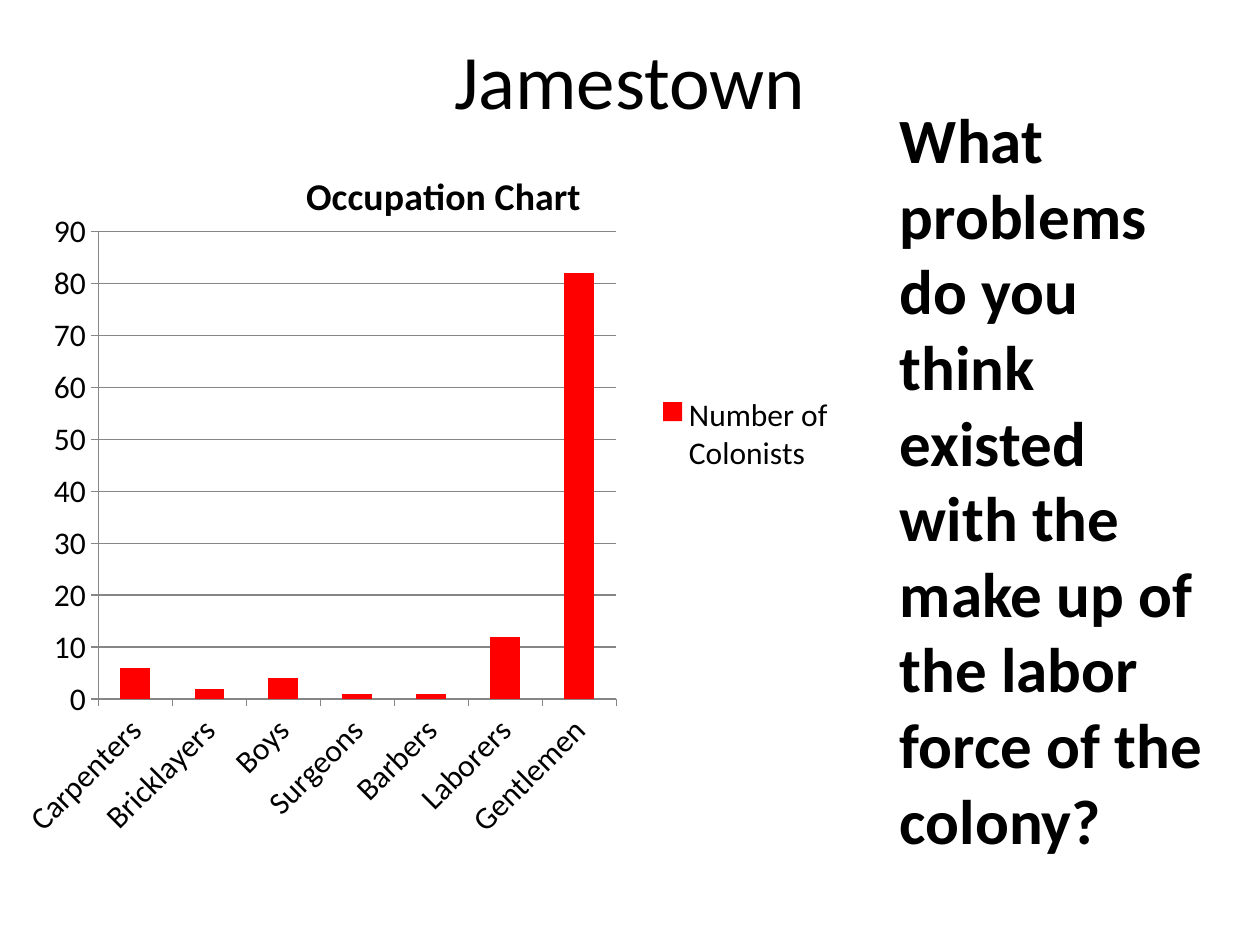
from dataclasses import dataclass

from lxml import etree
from pptx import Presentation
from pptx.chart.data import CategoryChartData
from pptx.dml.color import RGBColor
from pptx.enum.chart import XL_CHART_TYPE as ChartType
from pptx.enum.chart import XL_LEGEND_POSITION as LegendPos
from pptx.enum.chart import XL_TICK_MARK as Tick
from pptx.enum.text import MSO_ANCHOR as Anchor
from pptx.enum.text import PP_ALIGN as Align
from pptx.oxml.ns import qn
from pptx.util import Pt


@dataclass(frozen=True)
class Theme:
    font: str = "Calibri"
    text: RGBColor = RGBColor(0, 0, 0)
    bar: RGBColor = RGBColor(255, 0, 0)
    grid: RGBColor = RGBColor(0x86, 0x86, 0x86)
    title: float = 44
    question: float = 36
    chart: float = 18
    chart_title: float = 21.6


class SlideBuilder:
    def __init__(self, prs, theme):
        self.theme = theme
        self.slide = prs.slides.add_slide(prs.slide_layouts[5])

    def style(self, font, size, bold=False):
        font.name, font.size, font.bold = self.theme.font, Pt(size), bold
        font.color.rgb = self.theme.text

    def title(self, text, *box):
        sp = self.slide.shapes.title
        sp.left, sp.top, sp.width, sp.height = map(Pt, box)
        tf = sp.text_frame
        tf.text = text
        tf.vertical_anchor = Anchor.MIDDLE
        p = tf.paragraphs[0]
        p.alignment = Align.CENTER
        self.style(p.runs[0].font, self.theme.title)

    def text(self, text, *box, indent=0):
        tf = self.slide.shapes.add_textbox(*map(Pt, box)).text_frame
        tf.word_wrap = True
        tf.text = text
        p = tf.paragraphs[0]
        p.alignment = Align.LEFT
        p._p.get_or_add_pPr().set("marL", str(Pt(indent)))
        self.style(p.runs[0].font, self.theme.question, bold=True)

    def column_chart(self, title, series, values, *box):
        data = CategoryChartData()
        data.categories = list(values)
        data.add_series(series, list(values.values()))
        chart = self.slide.shapes.add_chart(
            ChartType.COLUMN_CLUSTERED, *map(Pt, box), data).chart
        self.style(chart.font, self.theme.chart)

        # Chart title and legend
        tf = chart.chart_title.text_frame
        tf.text = title
        self.style(tf.paragraphs[0].runs[0].font, self.theme.chart_title, bold=True)
        chart.has_legend = True
        chart.legend.position = LegendPos.RIGHT
        chart.legend.include_in_layout = False

        # Columns
        plot = chart.plots[0]
        plot.gap_width = 150
        plot.vary_by_categories = False
        fill = plot.series[0].format.fill
        fill.solid()
        fill.fore_color.rgb = self.theme.bar

        # Axes and gridlines
        val, cat = chart.value_axis, chart.category_axis
        val.minimum_scale, val.maximum_scale, val.major_unit = 0, 90, 10
        val.has_major_gridlines = True
        for axis in (val, cat):
            axis.major_tick_mark = Tick.OUTSIDE
            self.style(axis.tick_labels.font, self.theme.chart)
        for part in (val, cat, val.major_gridlines):
            part.format.line.color.rgb = self.theme.grid
            part.format.line.width = Pt(0.75)
        body = cat._element.find(qn("c:txPr")).find(qn("a:bodyPr"))
        body.set("rot", str(-45 * 60000))
        body.set("vert", "horz")

        # Places inside the chart, in points from its corner
        size = box[2:]
        self.place(chart._chartSpace.chart.plotArea, size, 44.2, 54.3, 296, 267.2,
                   inner=True)
        self.place(chart.legend._element, size, 359, 144, 110, 52)
        self.place(chart.chart_title._element, size, 159, 15)

    def place(self, element, size, *box, inner=False):
        for old in element.findall(qn("c:layout")):
            element.remove(old)
        layout = etree.Element(qn("c:layout"))
        before = [e for e in element if e.tag in (qn("c:legendPos"), qn("c:tx"))]
        element.insert(len(before), layout)
        manual = etree.SubElement(layout, qn("c:manualLayout"))
        settings = [("layoutTarget", "inner")] if inner else []
        settings += [("xMode", "edge"), ("yMode", "edge")]
        settings += [(tag, str(n / whole)) for tag, n, whole in zip("xywh", box, size * 2)]
        for tag, value in settings:
            etree.SubElement(manual, qn(f"c:{tag}")).set("val", value)


def main():
    prs = Presentation()
    prs.slide_width, prs.slide_height = Pt(720), Pt(540)
    s = SlideBuilder(prs, Theme())

    # Heading
    s.title("Jamestown", 36, 0, 648, 90)

    # Colonists by occupation
    colonists = {
        "Carpenters": 6, "Bricklayers": 2, "Boys": 4, "Surgeons": 1,
        "Barbers": 1, "Laborers": 12, "Gentlemen": 82,
    }
    s.column_chart("Occupation Chart", "Number of Colonists", colonists,
                   12, 78, 480, 438)

    # Discussion question
    s.text("What problems do you think existed with the make up of the labor "
           "force of the colony?", 480.2, 54, 222, 420, indent=27)

    prs.save("out.pptx")


if __name__ == "__main__":
    main()
